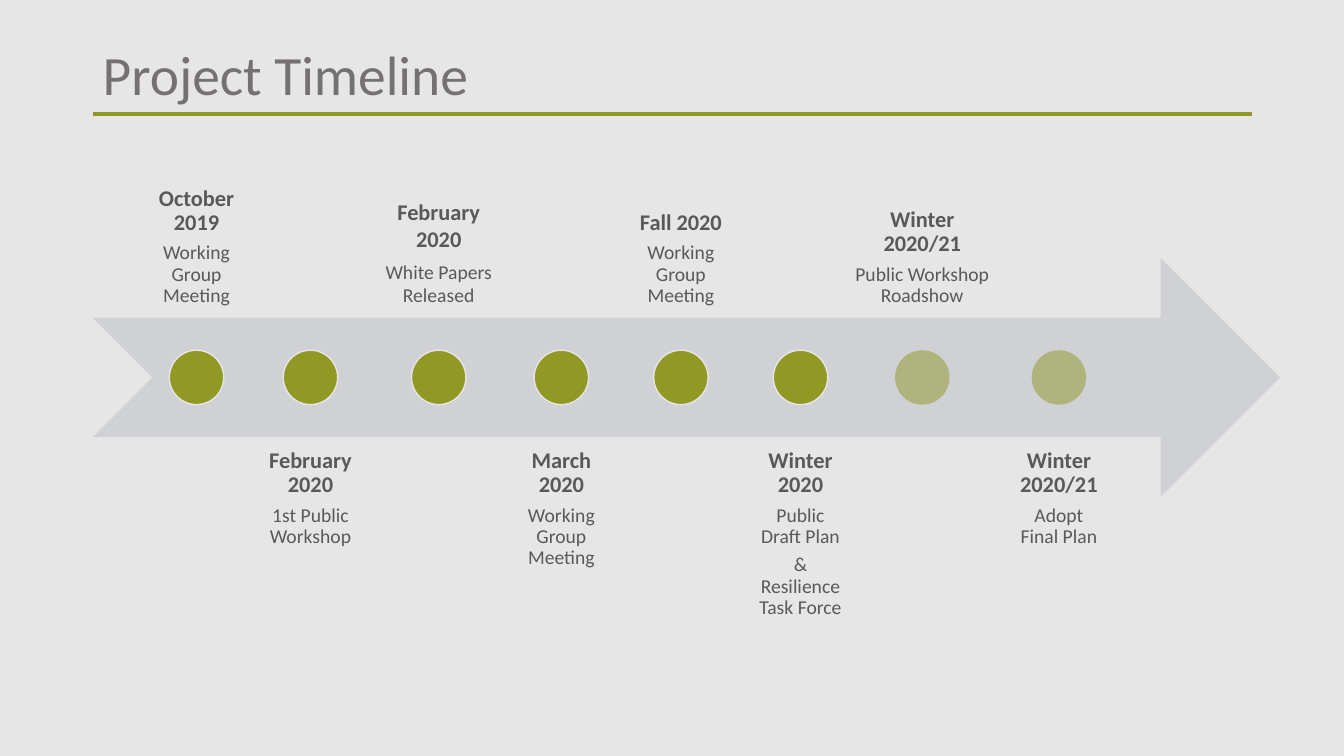
from dataclasses import dataclass
from lxml.etree import SubElement
from pptx import Presentation
from pptx.dml.color import RGBColor as RGB
from pptx.enum.shapes import MSO_CONNECTOR as CONN, MSO_SHAPE as SHAPE
from pptx.enum.text import MSO_ANCHOR as ANCHOR, MSO_AUTO_SIZE as FIT, PP_ALIGN as ALIGN
from pptx.oxml.ns import qn
from pptx.util import Pt


@dataclass(frozen=True)
class Theme:
    """Colours, font and type sizes of the slide."""
    font: str = "Calibri"
    back: RGB = RGB(0xE7, 0xE6, 0xE6)
    green: RGB = RGB(0x91, 0x99, 0x25)
    arrow: RGB = RGB(0xCF, 0xD1, 0xD4)
    title: RGB = RGB(0x76, 0x71, 0x71)
    text: RGB = RGB(0x59, 0x59, 0x59)
    title_size: float = 39.6
    date_size: float = 16
    note_size: float = 14


T = Theme()
LEFT, RULE_Y, RULE_W = 66.2, 81.4, 828
ARROW_Y, ARROW_W, ARROW_H = 184.3, 848.2, 170.6
DOT = 38.9
ABOVE, BELOW = 57, 312.5
MILESTONES = [
    (140.4, 78.5, False, "October 2019", ["Working Group Meeting"]),
    (221.8, 80.6, False, "February 2020", ["1st Public Workshop"]),
    (313.4, 98.6, False, "February 2020", ["White Papers Released"]),
    (401, 73.4, False, "March 2020", ["Working Group Meeting"]),
    (486.4, 79.2, False, "Fall 2020", ["Working Group Meeting"]),
    (571.8, 77, False, "Winter 2020", ["Public Draft Plan", "& Resilience Task Force"]),
    (658.8, 116.6, True, "Winter 2020/21", ["Public Workshop Roadshow"]),
    (756.4, 74.9, True, "Winter 2020/21", ["Adopt Final Plan"]),
]


def apply(obj, formats):
    """Set each attribute of obj from a dict."""
    for name, value in formats.items():
        setattr(obj, name, value)


def add_title(s, text):
    """Fill and place the title with its rule."""
    sp = s.shapes.title
    apply(sp, dict(left=Pt(LEFT), top=Pt(28.8), width=Pt(RULE_W), height=Pt(52.6)))
    tf = sp.text_frame
    apply(tf, dict(text=text, vertical_anchor=ANCHOR.MIDDLE, auto_size=FIT.NONE, word_wrap=True))
    p = tf.paragraphs[0]
    apply(p, dict(alignment=ALIGN.LEFT, line_spacing=0.9))
    apply(p.font, dict(name=T.font, size=Pt(T.title_size)))
    p.font.color.rgb = T.title
    rule = s.shapes.add_connector(
        CONN.STRAIGHT, Pt(LEFT), Pt(RULE_Y), Pt(LEFT + RULE_W), Pt(RULE_Y))
    rule.line.color.rgb = T.green
    rule.line.width = Pt(3)
    SubElement(rule._element.spPr, qn("a:effectLst"))


def add_solid(s, kind, x, y, w, h, color):
    """Add a flat shape without outline."""
    sp = s.shapes.add_shape(kind, Pt(x), Pt(y), Pt(w), Pt(h))
    sp.shadow.inherit = False
    sp.fill.solid()
    sp.fill.fore_color.rgb = color
    sp.line.fill.background()
    return sp


def add_dot(s, center, faded):
    """Add a milestone dot, half transparent when faded."""
    y = ARROW_Y + (ARROW_H - DOT) / 2
    sp = add_solid(s, SHAPE.OVAL, center - DOT / 2, y, DOT, DOT, T.green)
    if faded:
        color = sp._element.spPr.find(qn("a:solidFill"))[0]
        SubElement(color, qn("a:alpha"), val="50000")
    else:
        sp.line.color.rgb = T.back
        sp.line.width = Pt(1)


def add_label(s, center, width, above, date, notes, spacing):
    """Add a date and its notes above or below the arrow."""
    sp = s.shapes.add_textbox(
        Pt(center - width / 2), Pt(ABOVE if above else BELOW), Pt(width), Pt(ARROW_H))
    tf = sp.text_frame
    apply(tf, dict(word_wrap=True, auto_size=FIT.NONE,
                   vertical_anchor=ANCHOR.BOTTOM if above else ANCHOR.TOP))
    apply(tf, {f"margin_{side}": Pt(8.6) for side in ("left", "top", "right", "bottom")})
    for i, text in enumerate([date, *notes]):
        p = tf.add_paragraph() if i else tf.paragraphs[0]
        size = T.note_size if i else T.date_size
        p.text = text
        apply(p, dict(alignment=ALIGN.CENTER, line_spacing=spacing, space_after=Pt(size * 0.35)))
        apply(p.font, dict(name=T.font, size=Pt(size), bold=i == 0))
        p.font.color.rgb = T.text


def main():
    """Build the timeline slide."""
    prs = Presentation()
    apply(prs, dict(slide_width=Pt(960), slide_height=Pt(540)))
    s = prs.slides.add_slide(prs.slide_layouts[5])
    s.background.fill.solid()
    s.background.fill.fore_color.rgb = T.back
    add_title(s, "Project Timeline")
    add_solid(s, SHAPE.NOTCHED_RIGHT_ARROW, LEFT, ARROW_Y, ARROW_W, ARROW_H, T.arrow)
    for i, (center, width, faded, date, notes) in enumerate(MILESTONES):
        spacing = 1.0 if notes == ["White Papers Released"] else 0.9
        add_label(s, center, width, i % 2 == 0, date, notes, spacing)
        add_dot(s, center, faded)
    prs.save("out.pptx")


if __name__ == "__main__":
    main()
